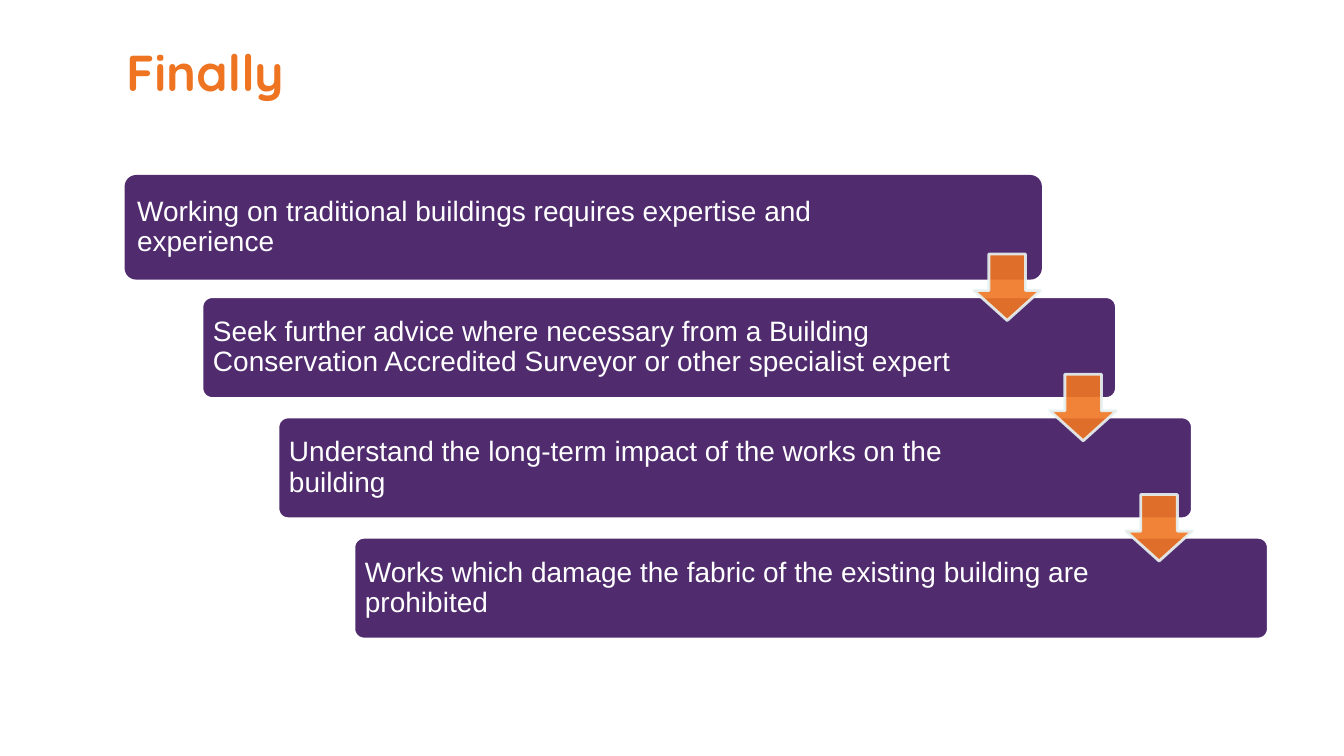
from lxml.etree import SubElement
from pptx import Presentation
from pptx.dml.color import RGBColor
from pptx.enum.shapes import MSO_SHAPE
from pptx.enum.text import MSO_ANCHOR, PP_ALIGN
from pptx.oxml.ns import qn
from pptx.util import Pt

PX = 9144
COLORS = {"orange": "EE7421", "purple": "502B6E", "white": "FFFFFF",
          "arrow": "EF7623", "arrow_edge": "E7F3F4"}
TITLE = "Finally"
STEPS = [
    "Working on traditional buildings requires expertise and experience",
    "Seek further advice where necessary from a Building Conservation Accredited Surveyor or other specialist expert",
    "Understand the long-term impact of the works on the building",
    "Works which damage the fabric of the existing building are prohibited",
]
LEFT, TOP = 125, 175
BAR_WIDTH, BAR_HEIGHT = 907, 101
STAIRS_WIDTH, STAIRS_HEIGHT = 226, 358
ARROW_SIZE, ARROW_DROP = 66, 77


def color(name):
    return RGBColor.from_string(COLORS[name])


def set_margins(frame, left, top, right, bottom):
    frame.margin_left, frame.margin_top = left * PX, top * PX
    frame.margin_right, frame.margin_bottom = right * PX, bottom * PX


def write(shape, text, font_name, size, color_name, margins, bold=False):
    frame = shape.text_frame
    frame.word_wrap = True
    frame.vertical_anchor = MSO_ANCHOR.MIDDLE
    set_margins(frame, *margins)
    para = frame.paragraphs[0]
    para.text = text
    para.alignment = PP_ALIGN.LEFT
    para.font.name, para.font.size, para.font.bold = font_name, Pt(size), bold
    para.font.color.rgb = color(color_name)
    return para


def add_block(preset, x, y, width, height, fill, edge, adjustments):
    shape = page.shapes.add_shape(preset, round(x * PX), round(y * PX), width * PX, height * PX)
    shape.shadow.inherit = False
    for index, value in enumerate(adjustments):
        shape.adjustments[index] = value
    shape.fill.solid()
    shape.fill.fore_color.rgb = color(fill)
    shape.line.color.rgb = color(edge)
    shape.line.width = Pt(2)
    return shape


deck = Presentation()
deck.slide_width, deck.slide_height = 1333 * PX, 750 * PX
page = deck.slides.add_slide(deck.slide_layouts[6])

title = page.shapes.add_textbox(LEFT * PX, 0, 1131 * PX, 142 * PX)
write(title, TITLE, "Quicksand", 36, "orange", (0, 0, 0, 0), bold=True)

last = len(STEPS) - 1
corners = [(LEFT + STAIRS_WIDTH * i / last, TOP + STAIRS_HEIGHT * i / last) for i in range(len(STEPS))]

for index, (step, (x, y)) in enumerate(zip(STEPS, corners)):
    edge = "white" if index else "purple"
    bar = add_block(MSO_SHAPE.ROUNDED_RECTANGLE, x, y, BAR_WIDTH, BAR_HEIGHT, "purple", edge, [0.1])
    para = write(bar, step, "Arial", 20, "white", (8, 8, 150, 8))
    para.line_spacing = 0.9

for x, y in corners[:-1]:
    arrow = add_block(MSO_SHAPE.DOWN_ARROW, x + BAR_WIDTH - ARROW_SIZE, y + ARROW_DROP,
                      ARROW_SIZE, ARROW_SIZE, "arrow", "arrow_edge", [0.45, 0.55])
    # adjustments follow the preset order: head length, then shaft width
    arrow.adjustments[0], arrow.adjustments[1] = 0.55, 0.45
    for tint in arrow.element.spPr.iter(qn("a:srgbClr")):
        SubElement(tint, qn("a:alpha"), val="90000")

deck.save("out.pptx")
